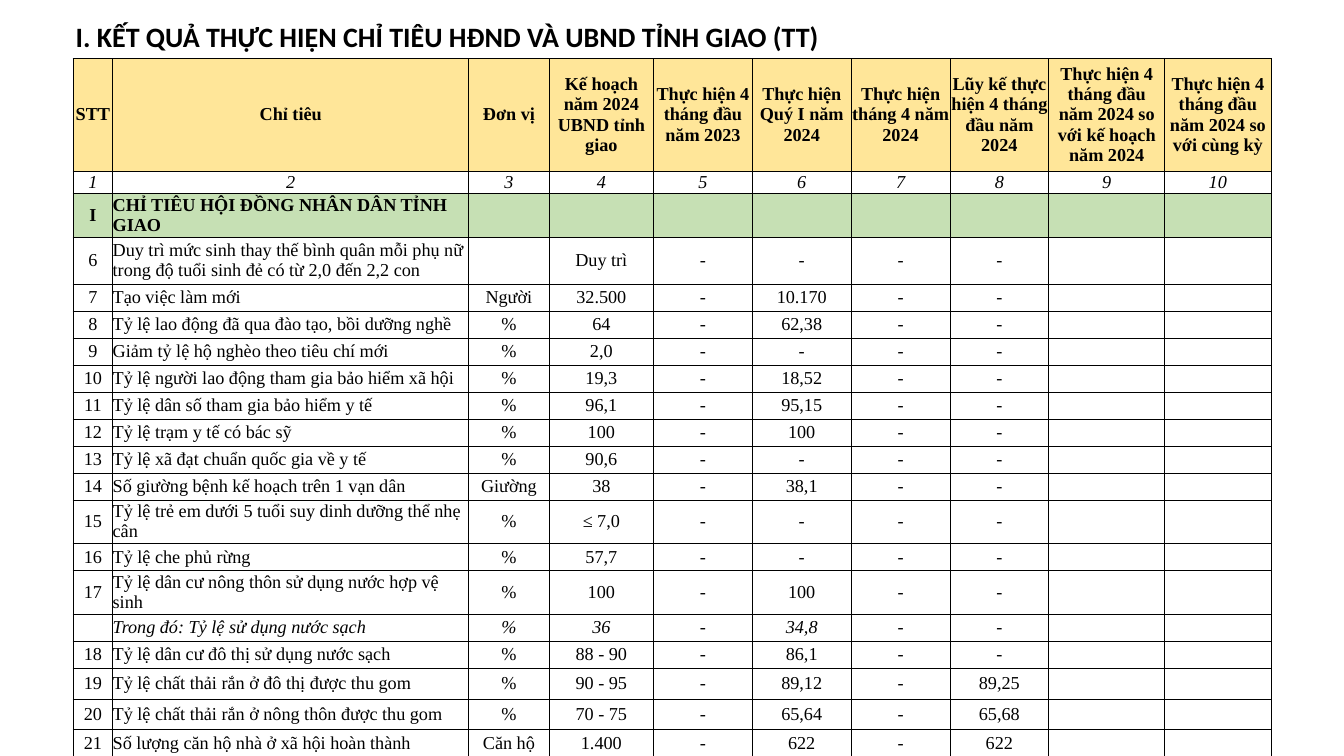
from dataclasses import dataclass

from lxml.etree import SubElement
from pptx import Presentation
from pptx.dml.color import RGBColor
from pptx.enum.text import MSO_ANCHOR as Anchor, MSO_AUTO_SIZE as AutoSize, PP_ALIGN as Align
from pptx.oxml.ns import qn
from pptx.table import _Cell as Cell
from pptx.text.text import TextFrame
from pptx.util import Cm, Pt

BLACK, HEADER_FILL, SECTION_FILL = "000000", "FFE699", "C6E0B4"
BODY_SIZE = 13
NONE = "-"

COLUMN_WIDTHS = [1.0, 8.97, 2.03, 2.63, 2.49, 2.49, 2.49, 2.49, 2.92, 2.68]
NAME_COLUMN = 1
HEADINGS = [
    "STT", "Chỉ tiêu", "Đơn vị", "Kế hoạch năm 2024 UBND tỉnh giao",
    "Thực hiện 4 tháng đầu năm 2023", "Thực hiện Quý I năm 2024",
    "Thực hiện tháng 4 năm 2024", "Lũy kế thực hiện 4 tháng đầu năm 2024",
    "Thực hiện 4 tháng đầu năm 2024 so với kế hoạch năm 2024",
    "Thực hiện 4 tháng đầu năm 2024 so với cùng kỳ",
]


@dataclass
class Indicator:
    number: str
    name: str
    unit: str
    plan: str
    first_quarter: str = NONE
    four_months: str = NONE
    height: float = 0.68
    italic: bool = False

    def texts(self) -> list[str]:
        return [self.number, self.name, self.unit, self.plan, NONE,
                self.first_quarter, NONE, self.four_months, "", ""]


@dataclass
class Row:
    texts: list[str]
    height: float
    fill: str | None = None
    bold: bool = False
    italic: bool = False
    centre_name: bool = False


INDICATORS = [
    Indicator("6", "Duy trì mức sinh thay thế bình quân mỗi phụ nữ trong độ tuổi sinh đẻ "
              "có từ 2,0 đến 2,2 con", "", "Duy trì", height=1.18),
    Indicator("7", "Tạo việc làm mới", "Người", "32.500", "10.170"),
    Indicator("8", "Tỷ lệ lao động đã qua đào tạo, bồi dưỡng nghề", "%", "64", "62,38"),
    Indicator("9", "Giảm tỷ lệ hộ nghèo theo tiêu chí mới", "%", "2,0"),
    Indicator("10", "Tỷ lệ người lao động tham gia bảo hiểm xã hội", "%", "19,3", "18,52"),
    Indicator("11", "Tỷ lệ dân số tham gia bảo hiểm y tế", "%", "96,1", "95,15"),
    Indicator("12", "Tỷ lệ trạm y tế có bác sỹ", "%", "100", "100"),
    Indicator("13", "Tỷ lệ xã đạt chuẩn quốc gia về y tế", "%", "90,6"),
    Indicator("14", "Số giường bệnh kế hoạch trên 1 vạn dân", "Giường", "38", "38,1"),
    Indicator("15", "Tỷ lệ trẻ em dưới 5 tuổi suy dinh dưỡng thể nhẹ cân", "%", "≤ 7,0"),
    Indicator("16", "Tỷ lệ che phủ rừng", "%", "57,7"),
    Indicator("17", "Tỷ lệ dân cư nông thôn sử dụng nước hợp vệ sinh", "%", "100", "100"),
    Indicator("", "Trong đó: Tỷ lệ sử dụng nước sạch", "%", "36", "34,8", italic=True),
    Indicator("18", "Tỷ lệ dân cư đô thị sử dụng nước sạch", "%", "88 - 90", "86,1"),
    Indicator("19", "Tỷ lệ chất thải rắn ở đô thị được thu gom", "%", "90 - 95",
              "89,12", "89,25", height=0.77),
    Indicator("20", "Tỷ lệ chất thải rắn ở nông thôn được thu gom", "%", "70 - 75",
              "65,64", "65,68", height=0.77),
    Indicator("21", "Số lượng căn hộ nhà ở xã hội hoàn thành", "Căn hộ", "1.400", "622", "622"),
]

ROWS = [
    Row(HEADINGS, 2.85, HEADER_FILL, bold=True, centre_name=True),
    Row([str(n) for n in range(1, 11)], 0.53, italic=True, centre_name=True),
    Row(["I", "CHỈ TIÊU HỘI ĐỒNG NHÂN DÂN TỈNH GIAO"] + [""] * 8, 0.64, SECTION_FILL, bold=True),
    *(Row(item.texts(), item.height, italic=item.italic) for item in INDICATORS),
]


def colour(value: str) -> RGBColor:
    return RGBColor.from_string(value)


def write(frame: TextFrame, text: str, *, size: float = BODY_SIZE, font: str = "Times New Roman",
          bold: bool = False, italic: bool = False, align: Align = Align.LEFT) -> None:
    paragraph = frame.paragraphs[0]
    paragraph.alignment = align
    if not text:
        # Keeps an empty cell from growing to the default text size
        SubElement(paragraph._p, qn("a:endParaRPr"), sz=str(size * 100))
        return
    run = paragraph.add_run()
    run.text = text
    run.font.size = Pt(size)
    run.font.name = font
    run.font.bold = bold
    run.font.italic = italic
    run.font.color.rgb = colour(BLACK)


def draw_borders(cell: Cell) -> None:
    properties = cell._tc.get_or_add_tcPr()
    for side in ("lnL", "lnR", "lnT", "lnB"):
        line = SubElement(properties, qn(f"a:{side}"), w=str(Pt(0.5)))
        SubElement(SubElement(line, qn("a:solidFill")), qn("a:srgbClr"), val=BLACK)


def draw_cell(cell: Cell, column: int, row: Row) -> None:
    cell.margin_left = cell.margin_right = cell.margin_top = cell.margin_bottom = 0
    cell.vertical_anchor = Anchor.MIDDLE
    draw_borders(cell)
    if row.fill:
        cell.fill.solid()
        cell.fill.fore_color.rgb = colour(row.fill)
    else:
        cell.fill.background()
    text = row.texts[column]
    is_left = column == NAME_COLUMN and not row.centre_name
    write(cell.text_frame, text, bold=row.bold, italic=row.italic and text != NONE,
          align=Align.LEFT if is_left else Align.CENTER)


def main() -> None:
    deck = Presentation()
    deck.slide_width, deck.slide_height = Cm(33.87), Cm(19.05)
    slide = deck.slides.add_slide(deck.slide_layouts[5])

    # Title
    heading = slide.shapes.title
    heading.left, heading.top, heading.width, heading.height = Cm(1.65), Cm(0.36), Cm(24.36), Cm(1.12)
    heading.text_frame.word_wrap = True
    heading.text_frame.auto_size = AutoSize.SHAPE_TO_FIT_TEXT
    heading.text_frame.vertical_anchor = Anchor.TOP
    write(heading.text_frame, "I. KẾT QUẢ THỰC HIỆN CHỈ TIÊU HĐND VÀ UBND TỈNH GIAO (TT)",
          size=20, font="Calibri", bold=True)

    # Table of indicators
    indicators = slide.shapes.add_table(
        len(ROWS), len(COLUMN_WIDTHS), Cm(1.84), Cm(1.47),
        Cm(sum(COLUMN_WIDTHS)), Cm(sum(row.height for row in ROWS))).table
    indicators.first_row = indicators.horz_banding = False
    for column, width in zip(indicators.columns, COLUMN_WIDTHS):
        column.width = Cm(width)
    for row_index, row in enumerate(ROWS):
        indicators.rows[row_index].height = Cm(row.height)
        for column_index in range(len(COLUMN_WIDTHS)):
            draw_cell(indicators.cell(row_index, column_index), column_index, row)

    deck.save("out.pptx")


if __name__ == "__main__":
    main()
